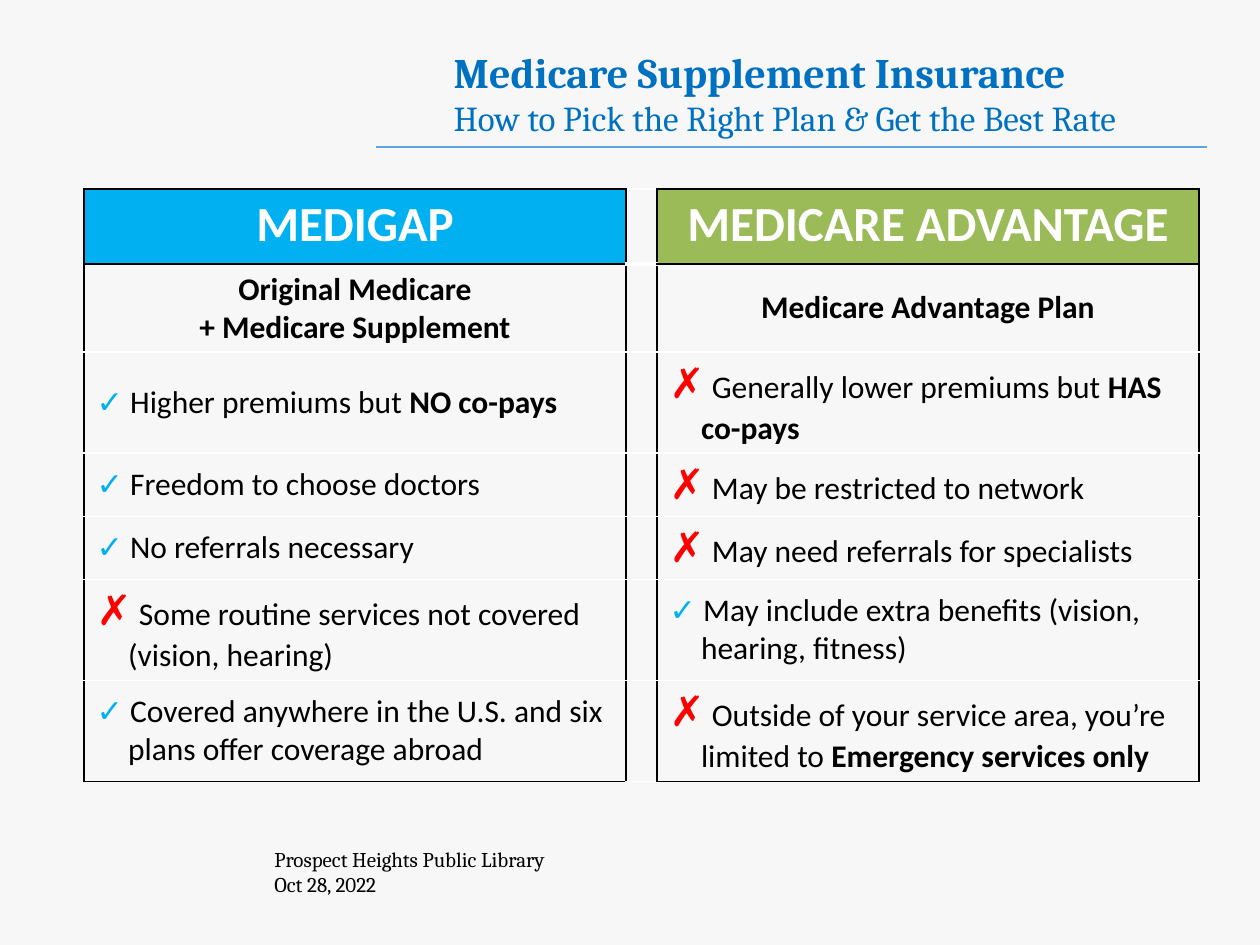
from lxml import etree
from pptx import Presentation
from pptx import util as u
from pptx.dml.color import RGBColor
from pptx.enum import shapes, text
from pptx.oxml import ns

COLORS = {
    "page": "F7F7F7", "title": "0070C0", "rule": "5FA4DB", "black": "000000",
    "white": "FFFFFF", "sky": "00B0F0", "green": "9BBB59", "red": "FF0000",
}
MARKS = {
    "yes": ("✓ ", {"size": 18, "bold": True, "color": "sky"}),
    "no": ("✗", {"size": 24, "bold": False, "color": "red"}),
}
HEADERS = [("MEDIGAP", "sky"), ("MEDICARE ADVANTAGE", "green")]
PLANS = [["Original Medicare", "+ Medicare Supplement"], ["Medicare Advantage Plan"]]
POINTS = [
    [("yes", "Higher premiums but ", "NO co-pays"),
     ("no", " Generally lower premiums but ", "HAS co-pays")],
    [("yes", "Freedom to choose doctors", ""),
     ("no", " May be restricted to network", "")],
    [("yes", "No referrals necessary", ""),
     ("no", " May need referrals for specialists", "")],
    [("no", " Some routine services not covered (vision, hearing)", ""),
     ("yes", "May include extra benefits (vision, hearing, fitness)", "")],
    [("yes", "Covered anywhere in the U.S. and six plans offer coverage abroad", ""),
     ("no", " Outside of your service area, you’re limited to ", "Emergency services only")],
]
COL_WIDTHS = [542, 31, 542]
ROW_HEIGHTS = [75, 88, 101, 63, 63, 101, 101]
PLAN_COLS = (0, 2)


def px(n):
    """Convert pixels to EMU."""
    return u.Emu(round(n * 914400 / 126))


def rgb(name):
    """Return a named colour."""
    return RGBColor.from_string(COLORS[name])


def add_run(p, words, size, color="black", bold=False, name="Calibri"):
    """Append a formatted run."""
    r = p.add_run()
    r.text = words
    for key, value in {"size": u.Pt(size), "bold": bold, "name": name}.items():
        setattr(r.font, key, value)
    r.font.color.rgb = rgb(color)


def set_format(obj, values):
    """Set attributes from a dict."""
    for key, value in values.items():
        setattr(obj, key, value)


def add_title(s):
    """Fill the title placeholder with title and subtitle."""
    sp = s.shapes.title
    set_format(sp, {"left": px(441), "top": px(40), "width": px(777), "height": px(106)})
    set_format(sp.text_frame, {
        "vertical_anchor": text.MSO_ANCHOR.TOP, "word_wrap": True,
        "auto_size": text.MSO_AUTO_SIZE.NONE,
    })
    p = sp.text_frame.paragraphs[0]
    p.alignment = text.PP_ALIGN.LEFT
    add_run(p, "Medicare Supplement Insurance", 24, "title", True, "Cambria")
    p.add_line_break()
    add_run(p, "How to Pick the Right Plan & Get the Best Rate", 20, "title", False, "Cambria")


def add_rule(s):
    """Draw the line below the title."""
    sp = s.shapes.add_connector(shapes.MSO_CONNECTOR.STRAIGHT, px(376), px(147), px(1207), px(147))
    sp.line.color.rgb = rgb("rule")
    sp.line.width = u.Pt(0.75)
    etree.SubElement(sp._element.spPr, ns.qn("a:effectLst"))


def add_footer(s, lines):
    """Add the venue and date."""
    tf = s.shapes.add_textbox(px(262), px(840), px(441), px(63)).text_frame
    tf.word_wrap = True
    add_lines(tf, lines, size=12, name="Cambria")


def add_lines(tf, lines, align=text.PP_ALIGN.LEFT, **style):
    """Write one paragraph per line."""
    for i, words in enumerate(lines):
        p = tf.add_paragraph() if i else tf.paragraphs[0]
        p.alignment = align
        add_run(p, words, **style)


def set_borders(cell, top, bottom, bottom_width=1):
    """Set the four borders of a cell, with black sides."""
    tc_pr = cell._tc.get_or_add_tcPr()
    sides = {"L": ("black", 1), "R": ("black", 1), "T": (top, 1), "B": (bottom, bottom_width)}
    for side, (color, width) in sides.items():
        ln = etree.SubElement(tc_pr, ns.qn(f"a:ln{side}"), w=str(u.Pt(width)))
        fill = etree.SubElement(ln, ns.qn("a:solidFill"))
        etree.SubElement(fill, ns.qn("a:srgbClr"), val=COLORS[color])


def style_grid(table):
    """Set the borders and clear the fill of every cell."""
    last = len(ROW_HEIGHTS) - 1
    for row in range(last + 1):
        for col in range(len(COL_WIDTHS)):
            cell = table.cell(row, col)
            if col in PLAN_COLS:
                set_borders(cell, "black" if row < 2 else "white",
                            "black" if row in (0, last) else "white")
            else:
                set_borders(cell, "white", "white", 1 if row else 3)
            cell.fill.background()


def add_point(cell, mark, words, strong):
    """Write a marked point with a hanging indent."""
    cell.vertical_anchor = text.MSO_ANCHOR.MIDDLE
    p = cell.text_frame.paragraphs[0]
    p._p.get_or_add_pPr().attrib.update({"marL": "228600", "indent": "-228600"})
    symbol, style = MARKS[mark]
    add_run(p, symbol, **style)
    add_run(p, words, 18)
    if strong:
        add_run(p, strong, 18, bold=True)


def add_comparison(s):
    """Build the table of the two plans."""
    table = s.shapes.add_table(len(ROW_HEIGHTS), len(COL_WIDTHS), px(84), px(189),
                               px(sum(COL_WIDTHS)), px(sum(ROW_HEIGHTS))).table
    set_format(table, {"first_row": False, "horz_banding": False})
    for column, width in zip(table.columns, COL_WIDTHS):
        column.width = px(width)
    for row, height in zip(table.rows, ROW_HEIGHTS):
        row.height = px(height)
    style_grid(table)
    center = text.PP_ALIGN.CENTER
    for i, col in enumerate(PLAN_COLS):
        head, plan = table.cell(0, col), table.cell(1, col)
        label, color = HEADERS[i]
        head.fill.solid()
        head.fill.fore_color.rgb = rgb(color)
        add_lines(head.text_frame, [label], center, size=28, color="white", bold=True)
        plan.vertical_anchor = text.MSO_ANCHOR.MIDDLE
        add_lines(plan.text_frame, PLANS[i], center, size=18, bold=True)
        for row, points in enumerate(POINTS, 2):
            add_point(table.cell(row, col), *points[i])


def main():
    """Build and save the slide."""
    prs = Presentation()
    set_format(prs, {"slide_width": px(1260), "slide_height": px(945)})
    s = prs.slides.add_slide(prs.slide_layouts[5])
    s.background.fill.solid()
    s.background.fill.fore_color.rgb = rgb("page")
    add_footer(s, ["Prospect Heights Public Library", "Oct 28, 2022"])
    add_title(s)
    add_rule(s)
    add_comparison(s)
    prs.save("out.pptx")


if __name__ == "__main__":
    main()
